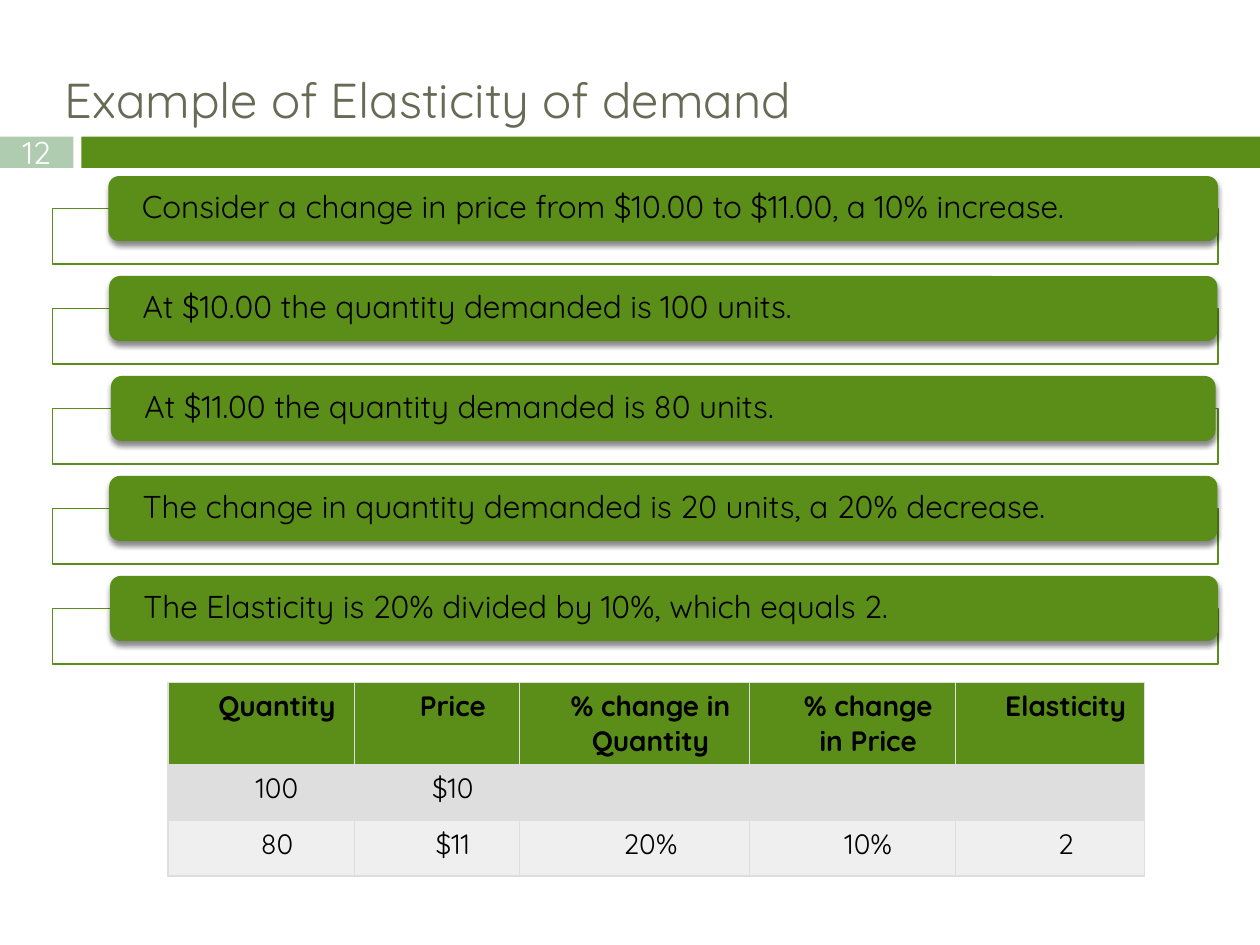
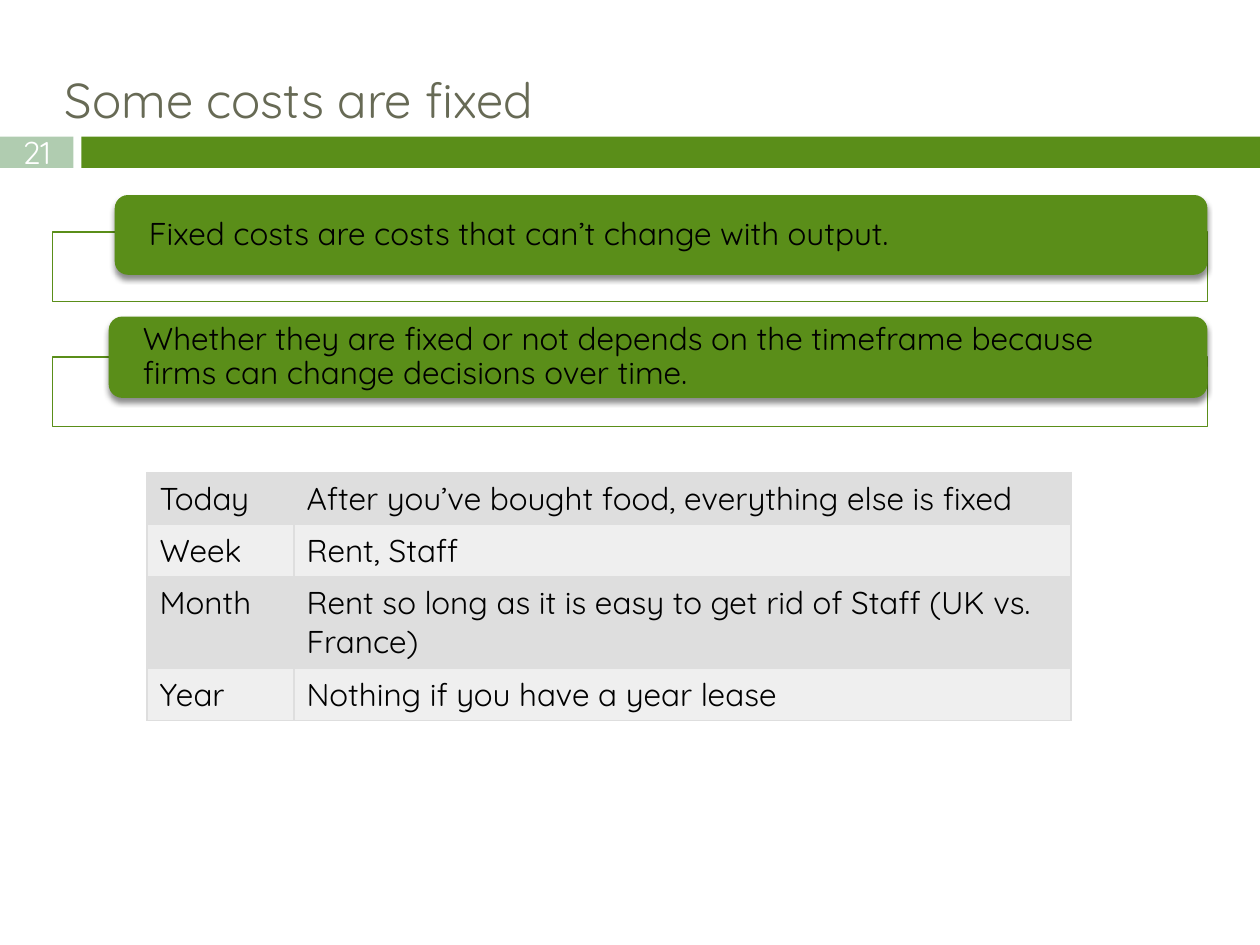
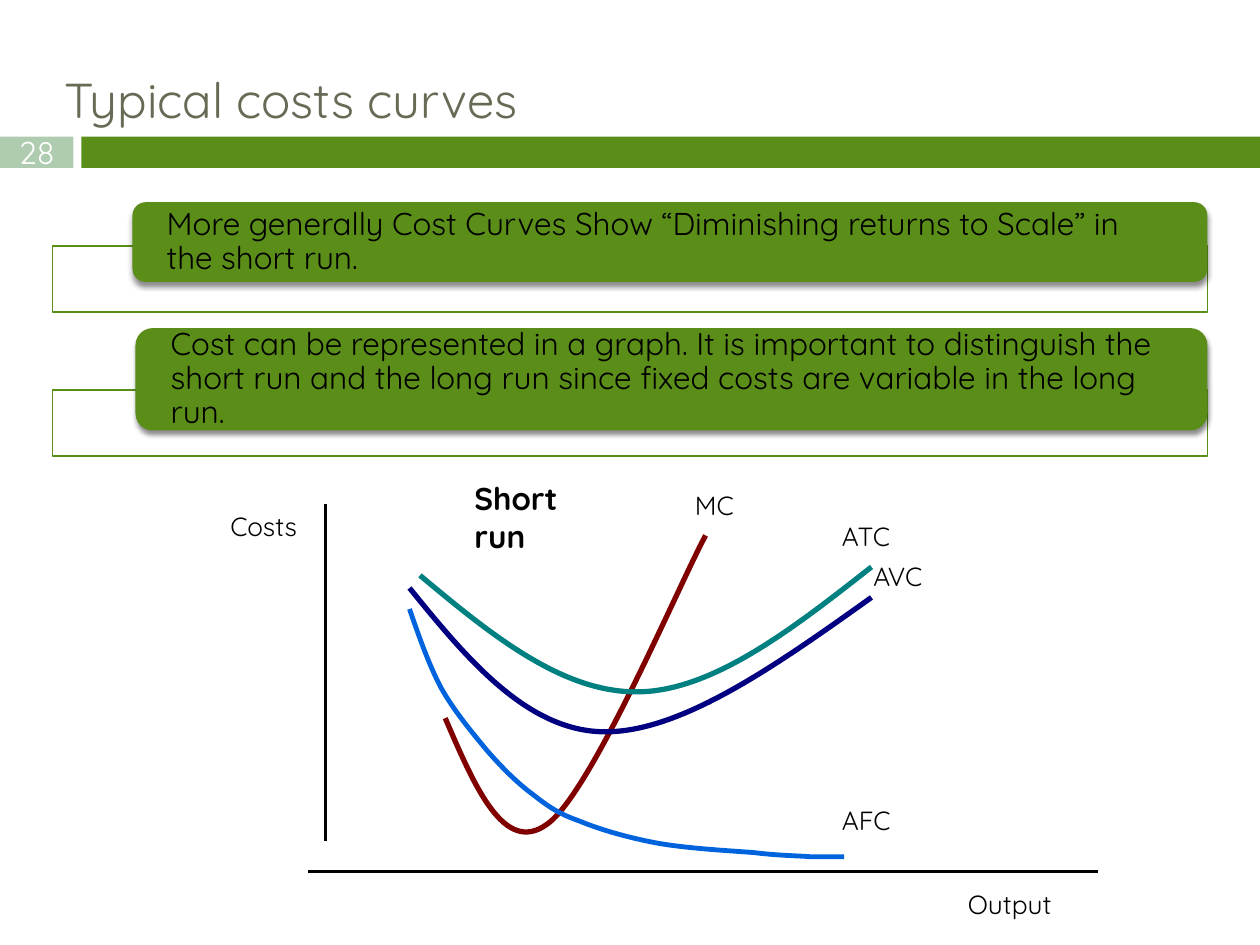
from dataclasses import dataclass
from typing import Optional

from lxml.etree import SubElement
from pptx import Presentation
from pptx.dml.color import RGBColor
from pptx.enum.shapes import MSO_CONNECTOR as CONN, MSO_SHAPE as SHAPE
from pptx.enum.text import MSO_ANCHOR as ANCHOR, PP_ALIGN as ALIGN
from pptx.oxml.ns import qn
from pptx.util import Emu, Inches, Pt

FONT = "Quicksand"
WHITE = RGBColor(0xFF, 0xFF, 0xFF)
BLACK = RGBColor(0, 0, 0)
GREEN = RGBColor(0x5A, 0x8E, 0x19)
SAGE = RGBColor(0xB0, 0xCC, 0xB0)
OLIVE = RGBColor(0x67, 0x6A, 0x55)
GREY = RGBColor(0xDE, 0xDE, 0xDE)
PALE = RGBColor(0xEF, 0xEF, 0xEF)
MAROON = RGBColor(0x80, 0, 0)
TEAL = RGBColor(0, 0x80, 0x80)
NAVY = RGBColor(0, 0, 0x80)
BLUE = RGBColor(0, 0x63, 0xDE)

WIDTH, HEIGHT = Inches(10), Inches(7.5)
COLS, ROWS = 120, 90
LEFT = 5


def col(n: float) -> Emu:
    return Emu(round(WIDTH * n / COLS))


def row(n: float) -> Emu:
    return Emu(round(HEIGHT * n / ROWS))


def area(x: float, y: float, w: float, h: float) -> tuple:
    return col(x), row(y), col(w), row(h)


@dataclass(frozen=True)
class Card:
    text: str
    left: float
    top: float
    height: float
    frame_top: float
    frame_height: float
    frame_width: float = 110
    trim: float = 0


@dataclass(frozen=True)
class Grid:
    left: float
    top: float
    widths: list
    heights: list
    cells: list
    fills: list
    size: float = 18
    header: bool = False
    align: ALIGN = ALIGN.LEFT
    indent: float = 0


@dataclass(frozen=True)
class Label:
    text: str
    left: float
    top: float
    width: float = 10
    size: float = 15
    bold: bool = False


@dataclass(frozen=True)
class Curve:
    color: RGBColor
    weight: float
    points: list


def write(tf, text: str, *, size: float = 18, color: RGBColor = BLACK,
          bold: bool = False, align: ALIGN = ALIGN.LEFT,
          anchor: Optional[ANCHOR] = None, insets: Optional[tuple] = None,
          spacing: Optional[float] = None, indent: float = 0) -> None:
    tf.word_wrap = True
    if anchor is not None:
        tf.vertical_anchor = anchor
    if insets is not None:
        tf.margin_left = tf.margin_right = Inches(insets[0])
        tf.margin_top = tf.margin_bottom = Inches(insets[1])
    p = tf.paragraphs[0]
    p.alignment = align
    if spacing:
        p.line_spacing = spacing
    if indent:
        p._p.get_or_add_pPr().set("marL", str(col(indent)))
    r = p.add_run()
    r.text = text
    r.font.name, r.font.size, r.font.bold = FONT, Pt(size), bold
    r.font.color.rgb = color


def add_box(s, kind: SHAPE, box: tuple, fill: RGBColor,
            line: Optional[RGBColor] = None):
    sp = s.shapes.add_shape(kind, *box)
    sp.shadow.inherit = False
    sp.fill.solid()
    sp.fill.fore_color.rgb = fill
    if line is None:
        sp.line.fill.background()
    else:
        sp.line.color.rgb = line
        sp.line.width = Pt(0.79)
    return sp


def add_text(s, box: tuple, text: str, **fmt) -> None:
    write(s.shapes.add_textbox(*box).text_frame, text, **fmt)


def add_alpha(color_el, percent: int) -> None:
    SubElement(color_el, qn("a:alpha"), val=str(percent * 1000))


def cast_shadow(sp) -> None:
    effects = sp.element.spPr.find(qn("a:effectLst"))
    shadow = SubElement(effects, qn("a:outerShdw"), blurRad=str(Pt(3)),
                        dist=str(Pt(2.4)), dir="5400000", rotWithShape="0")
    add_alpha(SubElement(shadow, qn("a:srgbClr"), val=str(BLACK)), 45)


def add_card(s, card: Card) -> None:
    frame = add_box(s, SHAPE.RECTANGLE,
                    area(LEFT, card.frame_top, card.frame_width, card.frame_height),
                    WHITE, GREEN)
    add_alpha(frame.element.spPr.find(qn("a:solidFill")).find(qn("a:srgbClr")), 90)
    width = LEFT + card.frame_width - card.left - card.trim
    pill = add_box(s, SHAPE.ROUNDED_RECTANGLE,
                   area(card.left, card.top, width, card.height), GREEN)
    cast_shadow(pill)
    write(pill.text_frame, card.text, anchor=ANCHOR.MIDDLE,
          insets=(0.24, 0), spacing=0.9)


def set_borders(cell) -> None:
    tc_pr = cell._tc.get_or_add_tcPr()
    for i, side in enumerate(("lnL", "lnR", "lnT", "lnB")):
        ln = tc_pr.makeelement(qn(f"a:{side}"), {"w": str(Pt(0.75))})
        fill = SubElement(ln, qn("a:solidFill"))
        SubElement(fill, qn("a:srgbClr"), val=str(GREY))
        tc_pr.insert(i, ln)


def add_grid(s, grid: Grid) -> None:
    table = s.shapes.add_table(
        len(grid.heights), len(grid.widths),
        *area(grid.left, grid.top, sum(grid.widths), sum(grid.heights))).table
    table.first_row, table.horz_banding = grid.header, False
    for column, width in zip(table.columns, grid.widths):
        column.width = col(width)
    for i, (line, height) in enumerate(zip(grid.cells, grid.heights)):
        table.rows[i].height = row(height)
        for j, text in enumerate(line):
            cell = table.cell(i, j)
            cell.fill.solid()
            cell.fill.fore_color.rgb = grid.fills[i]
            set_borders(cell)
            if text:
                write(cell.text_frame, text, size=grid.size,
                      bold=grid.header and i == 0,
                      align=grid.align, indent=grid.indent)


def add_axis(s, x1: float, y1: float, x2: float, y2: float) -> None:
    line = s.shapes.add_connector(CONN.STRAIGHT, col(x1), row(y1), col(x2), row(y2))
    line.line.color.rgb = BLACK
    line.line.width = Pt(2.25)
    SubElement(line.element.spPr, qn("a:effectLst"))


def bend_segments(sp) -> None:
    outline = next(sp.element.iter(qn("a:path")))
    segments = outline.findall(qn("a:lnTo"))
    for i in range(0, len(segments), 3):
        bend = SubElement(outline, qn("a:cubicBezTo"))
        for segment in segments[i:i + 3]:
            bend.append(segment[0])
            outline.remove(segment)


def add_curve(s, curve: Curve) -> None:
    start, *rest = [(col(x), row(y)) for x, y in curve.points]
    builder = s.shapes.build_freeform(*start)
    builder.add_line_segments(rest, close=False)
    sp = builder.convert_to_shape()
    bend_segments(sp)
    sp.shadow.inherit = False
    sp.fill.background()
    sp.line.color.rgb = curve.color
    sp.line.width = Pt(curve.weight)


def add_slide(prs, number: int, title: str, cards: list):
    s = prs.slides.add_slide(prs.slide_layouts[6])
    add_box(s, SHAPE.RECTANGLE, area(7.75, 13, COLS - 7.75, 3), GREEN)
    tag = add_box(s, SHAPE.RECTANGLE, area(0, 13, 7, 3), SAGE)
    write(tag.text_frame, str(number), color=WHITE, align=ALIGN.CENTER,
          anchor=ANCHOR.MIDDLE, insets=(0, 0))
    add_text(s, area(LEFT, 6, 107, 6.7), title, size=28, color=OLIVE)
    for card in cards:
        add_card(s, card)
    return s


ELASTICITY_STEPS = [
    ("Consider a change in price from $10.00 to $11.00, a 10% increase.", 10.32, 0),
    ("At $10.00 the quantity demanded is 100 units.", 10.4, 0.05),
    ("At $11.00 the quantity demanded is 80 units.", 10.57, 0.23),
    ("The change in quantity demanded is 20 units, a 20% decrease.", 10.4, 0.05),
    ("The Elasticity is 20% divided by 10%, which equals 2.", 10.48, 0),
]
STEP_PITCH = 9.52
ELASTICITY_CARDS = [
    Card(text, left, 16.77 + i * STEP_PITCH, 6.2,
         19.86 + i * STEP_PITCH, 5.3, 111, trim)
    for i, (text, left, trim) in enumerate(ELASTICITY_STEPS)
]
ELASTICITY_TABLE = Grid(
    16, 65, [17.75, 15.75, 21.9, 19.6, 18], [7.78, 5.33, 5.33],
    [["Quantity", "Price", "% change in Quantity", "% change in Price", "Elasticity"],
     ["100", "$10", "", "", ""],
     ["80", "$11", "20%", "10%", "2"]],
    [GREEN, GREY, PALE], size=16, header=True, align=ALIGN.CENTER, indent=3)

FIXED_CARDS = [
    Card("Fixed costs are costs that can’t change with output.",
         10.93, 18.57, 7.6, 22.1, 6.6),
    Card("Whether they are fixed or not depends on the timeframe because "
         "firms can change decisions over time.", 10.35, 30.15, 7.75, 34, 6.6),
]
FIXED_TABLE = Grid(
    14, 45, [14, 74], [4.95, 4.95, 8.8, 4.95],
    [["Today", "After you’ve bought food, everything else is fixed"],
     ["Week", "Rent, Staff"],
     ["Month", "Rent so long as it is easy to get rid of Staff (UK vs. France)"],
     ["Year", "Nothing if you have a year lease"]],
    [GREY, PALE] * 2)

CURVE_CARDS = [
    Card("More generally Cost Curves Show “Diminishing returns to Scale” in "
         "the short run.", 12.62, 19.25, 7.6, 23.43, 6.3),
    Card("Cost can be represented in a graph. It is important to distinguish the "
         "short run and the long run since fixed costs are variable in the long run.",
         12.9, 31.25, 9.75, 37.15, 6.3),
]
COST_CURVES = [
    Curve(MAROON, 3, [(42.4, 68.4), (45.2, 74.9), (48, 81.5), (52.1, 78.5),
                      (56.3, 75.6), (64.7, 55.6), (67.2, 51)]),
    Curve(TEAL, 3, [(40, 54.8), (46.8, 60.5), (53.6, 66), (60.8, 65.9),
                    (67.9, 65.8), (75.5, 59.9), (83, 54)]),
    Curve(NAVY, 3, [(39, 56), (44.5, 62.8), (50.2, 69.6), (57.5, 69.7),
                    (64.8, 69.8), (73.9, 63.4), (83, 56.9)]),
    Curve(BLUE, 2.75, [(39, 58), (39.9, 60.6), (40.8, 63.2), (42, 65.5),
                       (43.3, 67.8), (45, 69.8), (46.4, 71.5),
                       (47.9, 73.2), (49.3, 74.6), (50.8, 75.7),
                       (52.2, 76.8), (53.2, 77.5), (55.2, 78.2),
                       (57.1, 79), (59.9, 79.8), (62.6, 80.3),
                       (65.4, 80.8), (69.2, 81), (71.8, 81.2),
                       (74.2, 81.5), (76.1, 81.5), (77.3, 81.6),
                       (78.4, 81.6), (79.4, 81.6), (80.4, 81.6)]),
]
CURVE_LABELS = [
    Label("Costs", 20.75, 48, 11.9),
    Label("MC", 65, 46),
    Label("ATC", 79, 49),
    Label("AVC", 82, 52.8),
    Label("Short run", 44, 45, 15, size=18, bold=True),
    Label("Output", 91, 84, 14),
    Label("AFC", 79, 76),
]


def main() -> None:
    prs = Presentation()
    prs.slide_width, prs.slide_height = WIDTH, HEIGHT

    s = add_slide(prs, 12, "Example of Elasticity of demand", ELASTICITY_CARDS)
    add_grid(s, ELASTICITY_TABLE)

    s = add_slide(prs, 21, "Some costs are fixed", FIXED_CARDS)
    add_grid(s, FIXED_TABLE)

    s = add_slide(prs, 28, "Typical costs curves", CURVE_CARDS)
    add_axis(s, 29.3, 83, 104.6, 83)
    add_axis(s, 31, 48, 31, 80.1)
    for curve in COST_CURVES:
        add_curve(s, curve)
    for label in CURVE_LABELS:
        add_text(s, area(label.left, label.top, label.width, 4.2), label.text,
                 size=label.size, bold=label.bold)

    prs.save("out.pptx")


if __name__ == "__main__":
    main()
